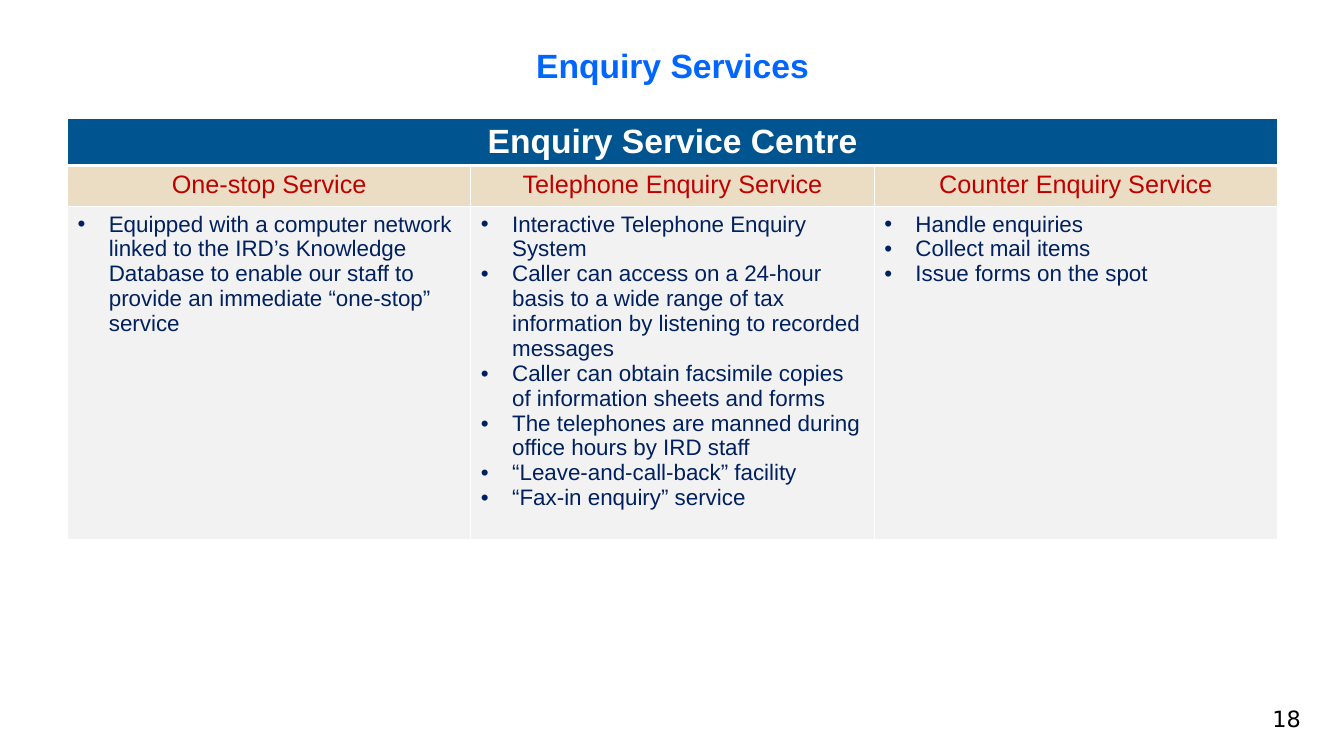
from lxml import etree
from pptx import Presentation
from pptx.dml.color import RGBColor
from pptx.enum import text
from pptx.oxml.ns import qn
from pptx.util import Inches, Pt

CENTRE_NAME = "Enquiry Service Centre"
SERVICES = {
    "One-stop Service": [
        "Equipped with a computer network linked to the IRD’s Knowledge Database "
        "to enable our staff to provide an immediate “one-stop” service",
    ],
    "Telephone Enquiry Service": [
        "Interactive Telephone Enquiry System",
        "Caller can access on a 24-hour basis to a wide range of tax information "
        "by listening to recorded messages",
        "Caller can obtain facsimile copies of information sheets and forms",
        "The telephones are manned during office hours by IRD staff",
        "“Leave-and-call-back” facility",
        "“Fax-in enquiry” service",
    ],
    "Counter Enquiry Service": [
        "Handle enquiries",
        "Collect mail items",
        "Issue forms on the spot",
    ],
}

# Text formats
TITLE = {"size": Pt(24), "bold": True, "name": "Arial", "color": "0066FF"}
CENTRE = TITLE | {"color": "FFFFFF"}
SERVICE = {"size": Pt(18), "bold": False, "name": "Arial", "color": "C00000"}
DETAIL = SERVICE | {"size": Pt(16), "color": "002060"}
PAGE = {"size": Pt(16), "name": "DejaVu Sans", "color": "000000"}

ROW_HEIGHTS = (0.47, 0.41, 3.3)
INDENT = Inches(0.31)


def colour(hex_code):
    return RGBColor.from_string(hex_code)


def add_bullet(paragraph):
    props = paragraph._p.get_or_add_pPr()
    props.set("marL", str(INDENT))
    props.set("indent", str(-INDENT))
    etree.SubElement(props, qn("a:buFont"), typeface="Arial")
    etree.SubElement(props, qn("a:buChar"), char="•")


def write(frame, lines, style, align=text.PP_ALIGN.LEFT, bulleted=False):
    for index, line in enumerate(lines):
        paragraph = frame.add_paragraph() if index else frame.paragraphs[0]
        paragraph.alignment = align
        if bulleted:
            add_bullet(paragraph)
        run = paragraph.add_run()
        run.text = line
        for key, value in style.items():
            if key == "color":
                run.font.color.rgb = colour(value)
            else:
                setattr(run.font, key, value)


def set_borders(cell, top=1, bottom=1):
    props = cell._tc.get_or_add_tcPr()
    widths = {"a:lnL": 1, "a:lnR": 1, "a:lnT": top, "a:lnB": bottom}
    for index, (tag, width) in enumerate(widths.items()):
        line = etree.Element(qn(tag), w=str(Pt(width)))
        fill = etree.SubElement(line, qn("a:solidFill"))
        etree.SubElement(fill, qn("a:srgbClr"), val="FFFFFF")
        props.insert(index, line)


def style_cell(cell, fill, **borders):
    cell.fill.solid()
    cell.fill.fore_color.rgb = colour(fill)
    set_borders(cell, **borders)


def add_title(slide, title_text):
    title = slide.shapes.title
    title.left, title.top = Inches(0.67), Inches(0.3)
    title.width, title.height = Inches(12), Inches(0.7)
    title.text_frame.vertical_anchor = text.MSO_ANCHOR.MIDDLE
    write(title.text_frame, [title_text], TITLE, text.PP_ALIGN.CENTER)


def add_services_table(slide):
    frame = slide.shapes.add_table(
        len(ROW_HEIGHTS), len(SERVICES),
        Inches(0.67), Inches(1.17), Inches(12), Inches(sum(ROW_HEIGHTS)))
    table = frame.table
    table.first_row = table.horz_banding = False
    for row, height in zip(table.rows, ROW_HEIGHTS):
        row.height = Inches(height)

    # Heading across all services
    heading = table.cell(0, 0)
    heading.merge(table.cell(0, len(SERVICES) - 1))
    write(heading.text_frame, [CENTRE_NAME], CENTRE, text.PP_ALIGN.CENTER)

    # One column per service
    for column, (service, details) in enumerate(SERVICES.items()):
        style_cell(table.cell(0, column), "005490", bottom=3)
        name_cell, detail_cell = table.cell(1, column), table.cell(2, column)
        style_cell(name_cell, "EBDDC3", top=3)
        write(name_cell.text_frame, [service], SERVICE, text.PP_ALIGN.CENTER)
        style_cell(detail_cell, "F2F2F2")
        write(detail_cell.text_frame, details, DETAIL, bulleted=True)


def add_page_number(slide, number):
    page = slide.shapes.add_textbox(
        Inches(9.9), Inches(6.95), Inches(3.1), Inches(0.4))
    page.text_frame.word_wrap = True
    write(page.text_frame, [number], PAGE, text.PP_ALIGN.RIGHT)


def main():
    deck = Presentation()
    deck.slide_width, deck.slide_height = Inches(13.33), Inches(7.5)
    slide = deck.slides.add_slide(deck.slide_layouts.get_by_name("Title Only"))
    add_title(slide, "Enquiry Services")
    add_services_table(slide)
    add_page_number(slide, "18")
    deck.save("out.pptx")


if __name__ == "__main__":
    main()
